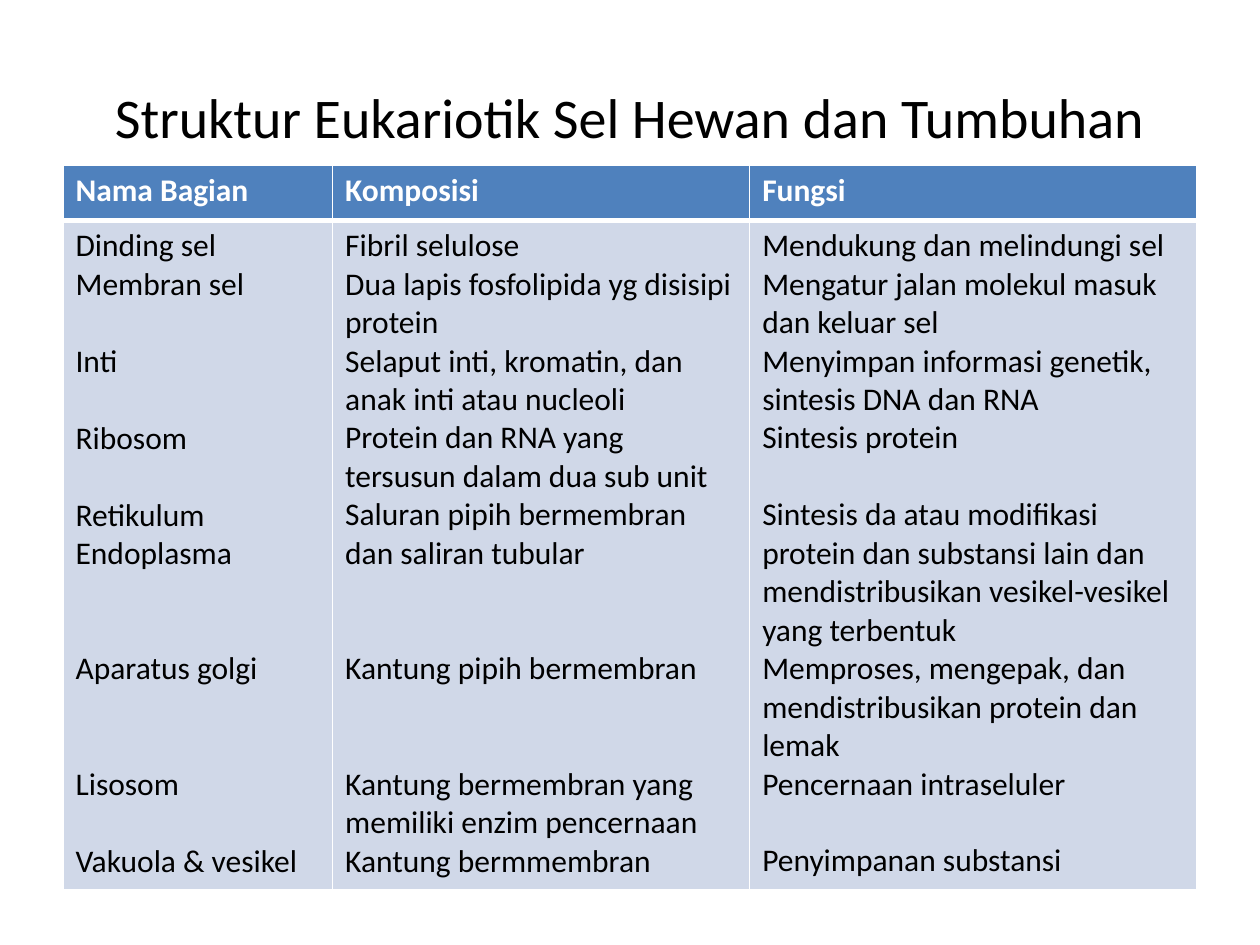
from lxml import etree
from pptx import Presentation
from pptx.dml.color import RGBColor
from pptx.enum.text import MSO_ANCHOR, PP_ALIGN
from pptx.oxml.ns import qn
from pptx.util import Inches, Pt

CENTER = PP_ALIGN.CENTER
MIDDLE = MSO_ANCHOR.MIDDLE
TITLE_ONLY = 5
FONT = "Calibri"
LINE_HEIGHT = 22
WHITE, BLACK, BLUE, PALE = "FFFFFF", "000000", "4F81BD", "D0D8E8"

TITLE = "Struktur Eukariotik Sel Hewan dan Tumbuhan"
COLUMN_WIDTHS = [2.14, 3.31, 3.55]
ROW_HEIGHTS = [0.44, 5.31]
HEADINGS = ["Nama Bagian", "Komposisi", "Fungsi"]

# Each entry is a text and the number of free lines above it.
COLUMNS = [
    [
        ("Dinding sel", 0),
        ("Membran sel", 0),
        ("Inti", 1),
        ("Ribosom", 1),
        ("Retikulum Endoplasma", 1),
        ("Aparatus golgi", 2),
        ("Lisosom", 2),
        ("Vakuola & vesikel", 1),
    ],
    [
        ("Fibril selulose", 0),
        ("Dua lapis fosfolipida yg disisipi protein", 0),
        ("Selaput inti, kromatin, dan anak inti atau nucleoli", 0),
        ("Protein dan RNA yang tersusun dalam dua sub unit", 0),
        ("Saluran pipih bermembran dan saliran tubular", 0),
        ("Kantung pipih bermembran", 2),
        ("Kantung bermembran yang memiliki enzim pencernaan", 2),
        ("Kantung bermmembran", 0),
    ],
    [
        ("Mendukung dan melindungi sel", 0),
        ("Mengatur jalan molekul masuk dan keluar sel", 0),
        ("Menyimpan informasi genetik, sintesis DNA dan RNA", 0),
        ("Sintesis protein", 0),
        ("Sintesis da atau modifikasi protein dan substansi lain dan "
         "mendistribusikan vesikel-vesikel yang terbentuk", 1),
        ("Memproses, mengepak, dan mendistribusikan protein dan lemak", 0),
        ("Pencernaan intraseluler", 0),
        ("Penyimpanan substansi", 1),
    ],
]


def color(value):
    return RGBColor.from_string(value)


def set_font(paragraph, size, value, bold=False):
    font = paragraph.font
    font.name, font.size, font.bold = FONT, Pt(size), bold
    font.color.rgb = color(value)


def set_borders(cell, top, bottom):
    properties = cell._tc.get_or_add_tcPr()
    for side, width in (("L", 1), ("R", 1), ("T", top), ("B", bottom)):
        line = etree.SubElement(properties, qn(f"a:ln{side}"), w=str(Pt(width)))
        fill = etree.SubElement(line, qn("a:solidFill"))
        etree.SubElement(fill, qn("a:srgbClr"), val=WHITE)


def fill_cell(cell, entries, background, text_color, bold, top, bottom):
    set_borders(cell, top, bottom)
    cell.fill.solid()
    cell.fill.fore_color.rgb = color(background)
    frame = cell.text_frame
    for index, (text, free_lines) in enumerate(entries):
        paragraph = frame.add_paragraph() if index else frame.paragraphs[0]
        paragraph.text = text
        if free_lines:
            paragraph.space_before = Pt(free_lines * LINE_HEIGHT)
        set_font(paragraph, 18, text_color, bold)


def place_title(slide, left, top, width, height):
    title = slide.shapes.title
    title.left, title.top = Inches(left), Inches(top)
    title.width, title.height = Inches(width), Inches(height)
    frame = title.text_frame
    frame.text = TITLE
    frame.word_wrap = True
    frame.vertical_anchor = MIDDLE
    paragraph = frame.paragraphs[0]
    paragraph.alignment = CENTER
    set_font(paragraph, 32, BLACK)


def place_cell_table(slide, left, top, width, height):
    table = slide.shapes.add_table(
        len(ROW_HEIGHTS), len(COLUMN_WIDTHS),
        Inches(left), Inches(top), Inches(width), Inches(height),
    ).table
    for column, share in zip(table.columns, COLUMN_WIDTHS):
        column.width = Inches(width * share / sum(COLUMN_WIDTHS))
    for row, share in zip(table.rows, ROW_HEIGHTS):
        row.height = Inches(height * share / sum(ROW_HEIGHTS))
    for index, (heading, entries) in enumerate(zip(HEADINGS, COLUMNS)):
        fill_cell(table.cell(0, index), [(heading, 0)], BLUE, WHITE, True, 1, 3)
        fill_cell(table.cell(1, index), entries, PALE, BLACK, False, 3, 1)


def main():
    presentation = Presentation()
    presentation.slide_width = Inches(10)
    presentation.slide_height = Inches(7.5)
    slide = presentation.slides.add_slide(presentation.slide_layouts[TITLE_ONLY])
    place_title(slide, 0.5, 0.3, 9, 1.25)
    place_cell_table(slide, 0.5, 1.31, 9, 5.75)
    presentation.save("out.pptx")


if __name__ == "__main__":
    main()
